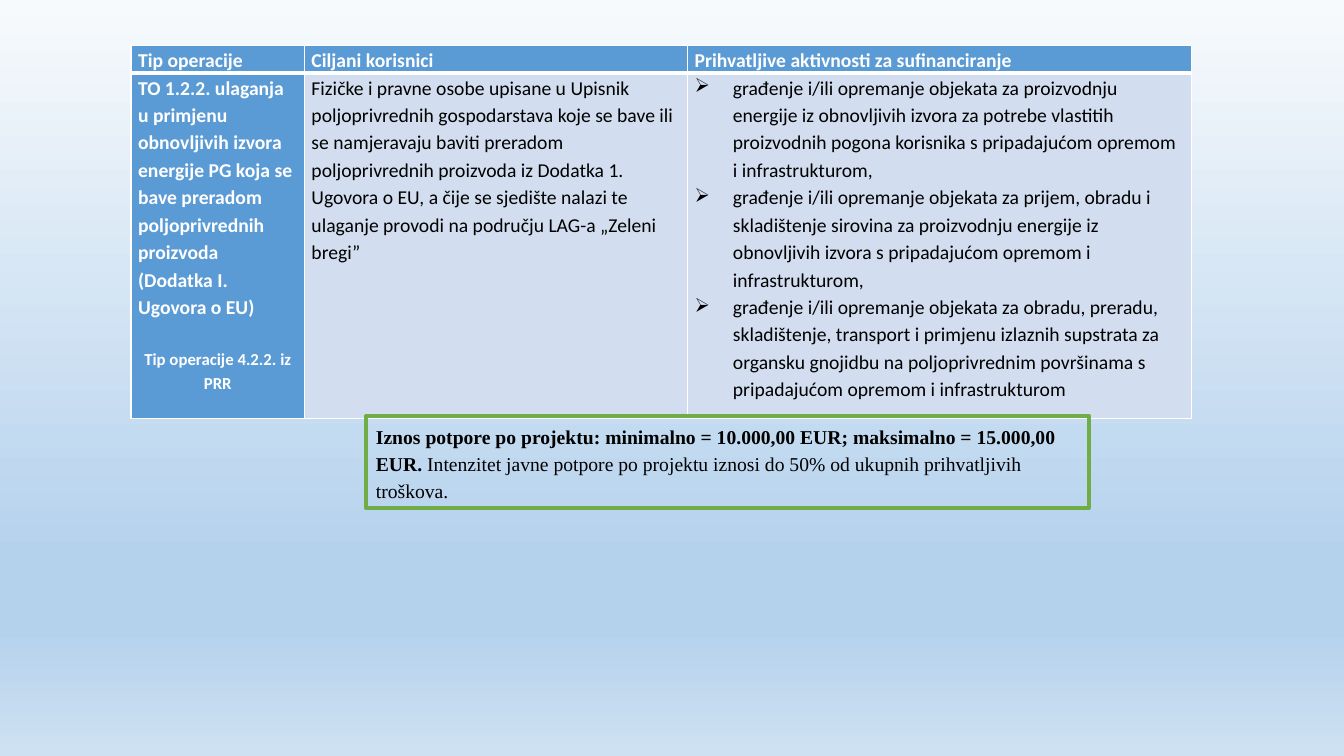
from lxml.etree import SubElement
from pptx import Presentation
from pptx.dml.color import RGBColor
from pptx.enum.shapes import MSO_SHAPE
from pptx.enum.text import MSO_ANCHOR, PP_ALIGN
from pptx.oxml import parse_xml
from pptx.oxml.ns import nsdecls, qn
from pptx.util import Inches, Pt

HUES = {"head": "5B9BD5", "body": "D2DEEF", "white": "FFFFFF",
        "black": "000000", "green": "70AD47"}
SKY = [(0, "F7FAFD"), (74, "B5D2EC"), (83, "B5D2EC"), (100, "CEE1F2")]
COLS = [1.72, 3.8, 5]
ROWS = [0.27, 3.43]
LEFT, TOP = 1.3, 0.45

HEADS = ["Tip operacije", "Ciljani korisnici", "Prihvatljive aktivnosti za sufinanciranje"]
TYPE = [
    "TO 1.2.2. ulaganja u primjenu obnovljivih izvora energije PG koja se bave "
    "preradom poljoprivrednih proizvoda (Dodatka I. Ugovora o EU)",
    "Tip operacije 4.2.2. iz PRR",
]
USERS = [
    "Fizičke i pravne osobe upisane u Upisnik poljoprivrednih gospodarstava koje se bave "
    "ili se namjeravaju baviti preradom poljoprivrednih proizvoda iz Dodatka 1. Ugovora o EU, "
    "a čije se sjedište nalazi te ulaganje provodi na području LAG-a „Zeleni bregi”",
]
WORKS = [
    "građenje i/ili opremanje objekata za proizvodnju energije iz obnovljivih izvora za "
    "potrebe vlastitih proizvodnih pogona korisnika s pripadajućom opremom i infrastrukturom,",
    "građenje i/ili opremanje objekata za prijem, obradu i skladištenje sirovina za "
    "proizvodnju energije iz obnovljivih izvora s pripadajućom opremom i infrastrukturom,",
    "građenje i/ili opremanje objekata za obradu, preradu, skladištenje, transport i primjenu "
    "izlaznih supstrata za organsku gnojidbu na poljoprivrednim površinama s pripadajućom "
    "opremom i infrastrukturom",
]
GRID = [[[head] for head in HEADS], [TYPE, USERS, WORKS]]


def style(para, face, hue, bold=None):
    para.line_spacing = 1.15
    para.font.name = face
    para.font.size = Pt(14)
    para.font.bold = bold
    para.font.color.rgb = RGBColor.from_string(HUES[hue])


def edge(cell, side, width):
    line = SubElement(cell._tc.get_or_add_tcPr(), qn(f"a:ln{side}"), w=str(Pt(width)))
    fill = SubElement(line, qn("a:solidFill"))
    SubElement(fill, qn("a:srgbClr"), val=HUES["white"])


deck = Presentation()
deck.slide_width, deck.slide_height = Inches(13.33), Inches(7.5)
slide = deck.slides.add_slide(deck.slide_layouts[6])

# Background sky
sky = slide.background.fill
sky.gradient()
sky.gradient_angle = 270
stops = slide.background._cSld.find(".//" + qn("a:gsLst"))
for old in list(stops):
    stops.remove(old)
for share, hue in SKY:
    stops.append(parse_xml(
        f'<a:gs {nsdecls("a")} pos="{share * 1000}"><a:srgbClr val="{hue}"/></a:gs>'))

# Table of operations
table = slide.shapes.add_table(
    len(ROWS), len(COLS), Inches(LEFT), Inches(TOP),
    Inches(sum(COLS)), Inches(sum(ROWS))).table
table.horz_banding = False
for col, width in zip(table.columns, COLS):
    col.width = Inches(width)
for row, height in zip(table.rows, ROWS):
    row.height = Inches(height)

for r, texts in enumerate(GRID):
    for c, lines in enumerate(texts):
        cell = table.cell(r, c)
        dark = r == 0 or c == 0
        cell.margin_left = cell.margin_right = Inches(0.07)
        cell.margin_top = cell.margin_bottom = 0
        for side in "LRTB":
            edge(cell, side, 3 if side == "TB"[1 - r] else 1)
        cell.fill.solid()
        cell.fill.fore_color.rgb = RGBColor.from_string(HUES["head" if dark else "body"])
        cell.text = "\n".join(lines)
        for para in cell.text_frame.paragraphs:
            style(para, "Calibri", "white" if dark else "black", dark)
            if lines is WORKS:
                props = para._p.get_or_add_pPr()
                props.set("marL", str(Inches(0.38)))
                props.set("indent", str(-Inches(0.38)))
                SubElement(props, qn("a:buChar"), char="➢")

note = table.cell(1, 0).text_frame.paragraphs[1]
note.alignment = PP_ALIGN.CENTER
note.space_before = Pt(19.5)
note.font.size = Pt(12)

# Grant amount
box = slide.shapes.add_shape(
    MSO_SHAPE.RECTANGLE, Inches(3.63), Inches(4.13), Inches(7.17), Inches(0.91))
box.shadow.inherit = False
box.fill.background()
box.line.color.rgb = RGBColor.from_string(HUES["green"])
box.line.width = Pt(3)
frame = box.text_frame
frame.word_wrap = True
frame.vertical_anchor = MSO_ANCHOR.TOP
para = frame.paragraphs[0]
para.alignment = PP_ALIGN.LEFT
para.space_after = Pt(10)
style(para, "Times New Roman", "black")
for text, bold in [
    ("Iznos potpore po projektu: minimalno = 10.000,00 EUR; maksimalno = 15.000,00 EUR. ", True),
    ("Intenzitet javne potpore po projektu iznosi do 50% od ukupnih prihvatljivih troškova.", False),
]:
    run = para.add_run()
    run.text = text
    run.font.bold = bold

deck.save("out.pptx")
